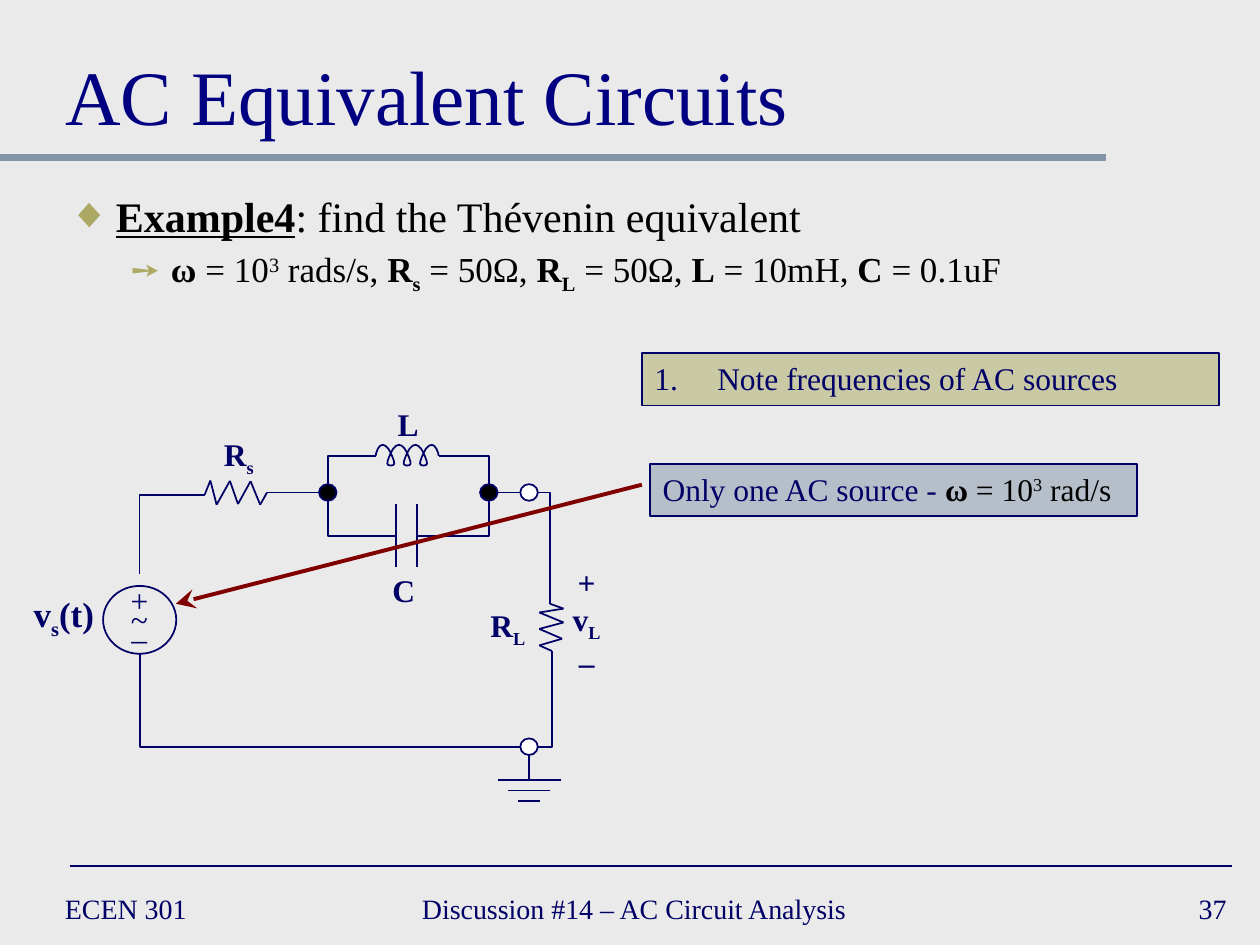
from dataclasses import dataclass
from itertools import pairwise

from lxml import etree
from pptx import Presentation
from pptx import util as u
from pptx.dml import color
from pptx.enum import shapes, text
from pptx.oxml import ns


@dataclass(frozen=True)
class Theme:
    font: str = "Times New Roman"
    background: str = "EAEAEA"
    title: str = "000080"
    ink: str = "000066"
    black: str = "000000"
    white: str = "FFFFFF"
    olive: str = "ACA964"
    slate: str = "8495A9"
    arrow: str = "800000"
    title_size: float = 44
    body_size: float = 24
    detail_size: float = 20
    label_size: float = 18
    footer_size: float = 16


THEME = Theme()
LEFT, CENTER, RIGHT = text.PP_ALIGN.LEFT, text.PP_ALIGN.CENTER, text.PP_ALIGN.RIGHT
TOP_WIRE, BOTTOM_WIRE = 281.4, 427
SOURCE_X, NODE_LEFT, NODE_RIGHT, TERMINAL_X = 79.8, 187.3, 279.3, 302.3
INDUCTOR_Y, CAPACITOR_Y = 260.6, 306.2
COIL_ENDS, PLATES = (214.7, 250.7), (226.3, 238.4)
DOT_WIDTH, DOT_HEIGHT = 10, 9.5


def rgb(value):
    return color.RGBColor.from_string(value)


def points(*values):
    return [u.Pt(value) for value in values]


def add_xml(parent, tag, **attributes):
    return etree.SubElement(parent, ns.qn(tag), **attributes)


def add_runs(paragraph, runs, size, ink=THEME.ink):
    for content, marks, *own_ink in runs:
        run = paragraph.add_run()
        run.text = content
        font = run.font
        font.name, font.size = THEME.font, u.Pt(size)
        font.bold, font.underline = "b" in marks, "u" in marks
        font.color.rgb = rgb(own_ink[0] if own_ink else ink)
        if "^" in marks:
            font._element.set("baseline", "30000")
        if "_" in marks:
            font._element.set("baseline", "-25000")


def set_bullet(paragraph, margin, indent, symbol=None, percent=100):
    properties = paragraph._p.get_or_add_pPr()
    properties.set("marL", str(u.Pt(margin)))
    properties.set("indent", str(u.Pt(indent)))
    if symbol:
        bullet_color = add_xml(properties, "a:buClr")
        add_xml(bullet_color, "a:srgbClr", val=THEME.olive)
        add_xml(properties, "a:buSzPct", val=str(percent * 1000))
    add_xml(properties, "a:buFont", typeface=THEME.font)
    if symbol:
        add_xml(properties, "a:buChar", char=symbol)
    else:
        add_xml(properties, "a:buAutoNum", type="arabicPeriod")


def add_label(parent, box, lines, size=THEME.label_size, align=CENTER,
              anchor=text.MSO_ANCHOR.TOP):
    frame = parent.add_textbox(*points(*box)).text_frame
    frame.word_wrap = False
    frame.vertical_anchor = anchor
    for index, runs in enumerate(lines):
        paragraph = frame.add_paragraph() if index else frame.paragraphs[0]
        paragraph.alignment = align
        add_runs(paragraph, runs, size)


def add_line(parent, start, end, ink=THEME.ink, width=1, head=None):
    connector = parent.add_connector(
        shapes.MSO_CONNECTOR.STRAIGHT, *points(*start, *end))
    connector.line.color.rgb = rgb(ink)
    connector.line.width = u.Pt(width)
    if head:
        add_xml(connector.line._get_or_add_ln(), "a:tailEnd", type=head, w="lg", len="lg")
    add_xml(connector._element.spPr, "a:effectLst")
    return connector


def add_bend(parent, start, end):
    connector = add_line(parent, start, end)
    geometry = connector._element.spPr.find(ns.qn("a:prstGeom"))
    geometry.set("prst", "bentConnector2")


def add_zigzag(parent, *corners):
    for start, end in pairwise(corners):
        add_line(parent, start, end)


def add_outline(parent, *corners):
    start, *rest = [points(*corner) for corner in corners]
    builder = parent.build_freeform(*start)
    builder.add_line_segments(rest, close=False)
    shape = builder.convert_to_shape()
    style_outline(shape)
    return shape


def style_outline(shape, fill=None):
    shape.shadow.inherit = False
    shape.line.color.rgb = rgb(THEME.ink)
    shape.line.width = u.Pt(1)
    if fill:
        shape.fill.solid()
        shape.fill.fore_color.rgb = rgb(fill)
    else:
        shape.fill.background()


def add_circle(parent, x, y, width=DOT_WIDTH, height=DOT_HEIGHT, fill=None):
    box = points(x - width / 2, y - height / 2, width, height)
    style_outline(parent.add_shape(shapes.MSO_SHAPE.OVAL, *box), fill)


def add_callout(parent, box, fill, runs, numbered=False):
    shape = parent.add_shape(shapes.MSO_SHAPE.RECTANGLE, *points(*box))
    style_outline(shape, fill)
    fill_color = shape._element.spPr.find(".//" + ns.qn("a:srgbClr"))
    add_xml(fill_color, "a:alpha", val="50000")
    frame = shape.text_frame
    frame.word_wrap = numbered
    frame.vertical_anchor = text.MSO_ANCHOR.TOP
    paragraph = frame.paragraphs[0]
    if numbered:
        set_bullet(paragraph, 36, -36)
    paragraph.alignment = LEFT
    add_runs(paragraph, runs, THEME.label_size)


def add_coil(parent, pitch=9.36, top=254.2, height=11.9):
    left, right = COIL_ENDS
    middle, half = (left + right) / 2, (right - left) / 2
    rise = [(half, 5.8), (half - 0.5, 3.6), (half - 1.3, 2.2),
            (half - 2.1, 0.8), (half - 2.9, 0), (1.5 * pitch, 0)]
    fall = [(-x, y) for x, y in reversed([(half, 6.4)] + rise[:-1])]
    down = [(3.6, 0), (2.6, 0.7), (1.4, 2.2), (0, 4.3), (-2.2, 9.4), (-2, 10.8), (-2, 12.2)]
    up = [(-x, y) for x, y in reversed(down)]
    loop = down + up + [(-pitch / 2, 0)]
    curve = rise + [(x + shift, y) for shift in (pitch, 0, -pitch) for x, y in loop] + fall
    shape = add_outline(parent, (left, top), (right, top + height))
    outline = shape._element.spPr.find(".//" + ns.qn("a:path"))
    for segment in list(outline):
        outline.remove(segment)

    def add_points(tag, corners):
        segment = add_xml(outline, tag)
        for x, y in corners:
            add_xml(segment, "a:pt", x=str(u.Pt(middle + x - left)), y=str(u.Pt(y)))

    add_points("a:moveTo", [(half, 6.4)])
    for index in range(0, len(curve), 3):
        add_points("a:cubicBezTo", curve[index:index + 3])


def add_branches(parent):
    add_coil(parent)
    for node, end, plate in zip((NODE_LEFT, NODE_RIGHT), COIL_ENDS, PLATES):
        add_bend(parent, (end, INDUCTOR_Y), (node, TOP_WIRE - 4.8))
        add_bend(parent, (plate, CAPACITOR_Y), (node, TOP_WIRE + 4.8))
        add_outline(parent, *[(plate, CAPACITOR_Y + offset) for offset in (-18, 0, 18)])


def add_ground(parent):
    add_line(parent, (TERMINAL_X, 445), (TERMINAL_X, BOTTOM_WIRE))
    for index, half in enumerate((18, 12.25, 6.5)):
        y = 445.7 + 6.1 * index
        add_line(parent, (TERMINAL_X - half, y), (TERMINAL_X + half, y))


def add_circuit(parent):
    right = TERMINAL_X + DOT_WIDTH / 2
    add_bend(parent, (297.3, BOTTOM_WIRE), (SOURCE_X, 374))
    add_bend(parent, (117, 282.9), (SOURCE_X, 328))
    add_zigzag(parent, (117, 282.6), (120.2, 274.6), (123.8, 288.4), (131.4, 274.8),
               (136, 288), (143.2, 275), (148.7, 288.4), (152.6, TOP_WIRE))
    add_line(parent, (182.2, TOP_WIRE), (152.6, TOP_WIRE))
    add_line(parent, (284.3, TOP_WIRE), (297.3, TOP_WIRE))
    add_bend(parent, (right, TOP_WIRE), (314.2, 345))
    add_zigzag(parent, (314.2, 345), (322, 347.8), (308.2, 350), (322, 355.7),
               (308.2, 359.4), (321.2, 365), (308.2, 368.8), (315.4, 372))
    add_bend(parent, (right, BOTTOM_WIRE), (315.4, 372))
    add_branches(parent)
    add_ground(parent)
    add_circle(parent, SOURCE_X, 354.2, 41.8, 38.8)
    for x, y, fill in ((NODE_LEFT, TOP_WIRE, THEME.black), (NODE_RIGHT, TOP_WIRE, THEME.black),
                       (TERMINAL_X, TOP_WIRE, THEME.white),
                       (TERMINAL_X, BOTTOM_WIRE - 0.3, THEME.white)):
        add_circle(parent, x, y, fill=fill)
    add_label(parent, (11.5, 335, 50, 31),
              [[("v", "b"), ("s", "b_"), ("(t)", "b")]], THEME.detail_size)
    for box, lines in (
            ((118, 245, 37, 29), [[("R", "b"), ("s", "b_")]]),
            ((67.6, 328.4, 24, 50), [[("+", "")], [("–", "")]]),
            ((67.6, 339.2, 24, 29), [[("~", "")]]),
            ((272.7, 342.6, 35, 29), [[("R", "b"), ("L", "b_")]]),
            ((219.7, 228, 27, 29), [[("L", "b")]]),
            ((217.2, 322.5, 27, 29), [[("C", "b")]]),
            ((319.2, 318, 32, 72), [[("+", "b")], [("v", "b"), ("L", "b_")], [("–", "b")]])):
        add_label(parent, box, lines)


def place(placeholder, box):
    placeholder.left, placeholder.top, placeholder.width, placeholder.height = points(*box)
    placeholder.text_frame.auto_size = text.MSO_AUTO_SIZE.NONE
    return placeholder.text_frame


def add_heading(slide):
    frame = place(slide.shapes.title, (30, 12, 660, 72))
    frame.vertical_anchor = text.MSO_ANCHOR.BOTTOM
    frame.paragraphs[0].alignment = LEFT
    add_runs(frame.paragraphs[0], [("AC Equivalent Circuits", "")], THEME.title_size, THEME.title)


def add_body(slide):
    frame = place(slide.placeholders[1], (32, 105.2, 658, 80.6))
    example, values = frame.paragraphs[0], frame.add_paragraph()
    set_bullet(example, 27, -27, "◆")
    example.space_before = u.Pt(0)
    add_runs(example, [("Example4", "bu"), (": find the Thévenin equivalent", "")],
             THEME.body_size, THEME.black)
    values.level = 1
    set_bullet(values, 58.5, -22.5, "➙", 85)
    values.space_before = u.Pt(4)
    add_runs(values, [
        ("ω", "b"), (" = 10", ""), ("3", "^"), (" rads/s, ", ""),
        ("R", "b"), ("s", "b_"), (" = 50Ω, ", ""), ("R", "b"), ("L", "b_"), (" = 50Ω, ", ""),
        ("L", "b"), (" = 10mH, ", ""), ("C ", "b"), ("= 0.1uF", "")],
        THEME.detail_size, THEME.black)


def add_footer(slide):
    for left, width, content, align in (
            (30, 156, "ECEN 301", LEFT),
            (234, 276, "Discussion #14 – AC Circuit Analysis", LEFT),
            (558, 150, "37", RIGHT)):
        add_label(slide.shapes, (left, 504, width, 30), [[(content, "")]],
                  THEME.footer_size, align, text.MSO_ANCHOR.MIDDLE)


def main():
    presentation = Presentation()
    presentation.slide_width, presentation.slide_height = points(720, 540)
    slide = presentation.slides.add_slide(presentation.slide_layouts[1])
    slide.background.fill.solid()
    slide.background.fill.fore_color.rgb = rgb(THEME.background)
    add_line(slide.shapes, (0, 90), (632, 90), THEME.slate, 4)
    add_line(slide.shapes, (40, 495), (704, 495))
    add_footer(slide)
    add_heading(slide)
    add_body(slide)
    add_circuit(slide.shapes.add_group_shape().shapes)
    add_callout(slide.shapes, (366.8, 201.7, 330, 30), THEME.olive,
                [("Note frequencies of AC sources", "")], numbered=True)
    add_line(slide.shapes, (366.8, 277), (100.5, 345), THEME.arrow, 2.25, "stealth")
    add_callout(slide.shapes, (371.5, 265, 278.4, 30), THEME.slate, [
        ("Only one AC source - ", ""), ("ω", "b", THEME.black), (" = 10", "", THEME.black),
        ("3", "^", THEME.black), (" rad/s", "", THEME.black)])
    presentation.save("out.pptx")


if __name__ == "__main__":
    main()
